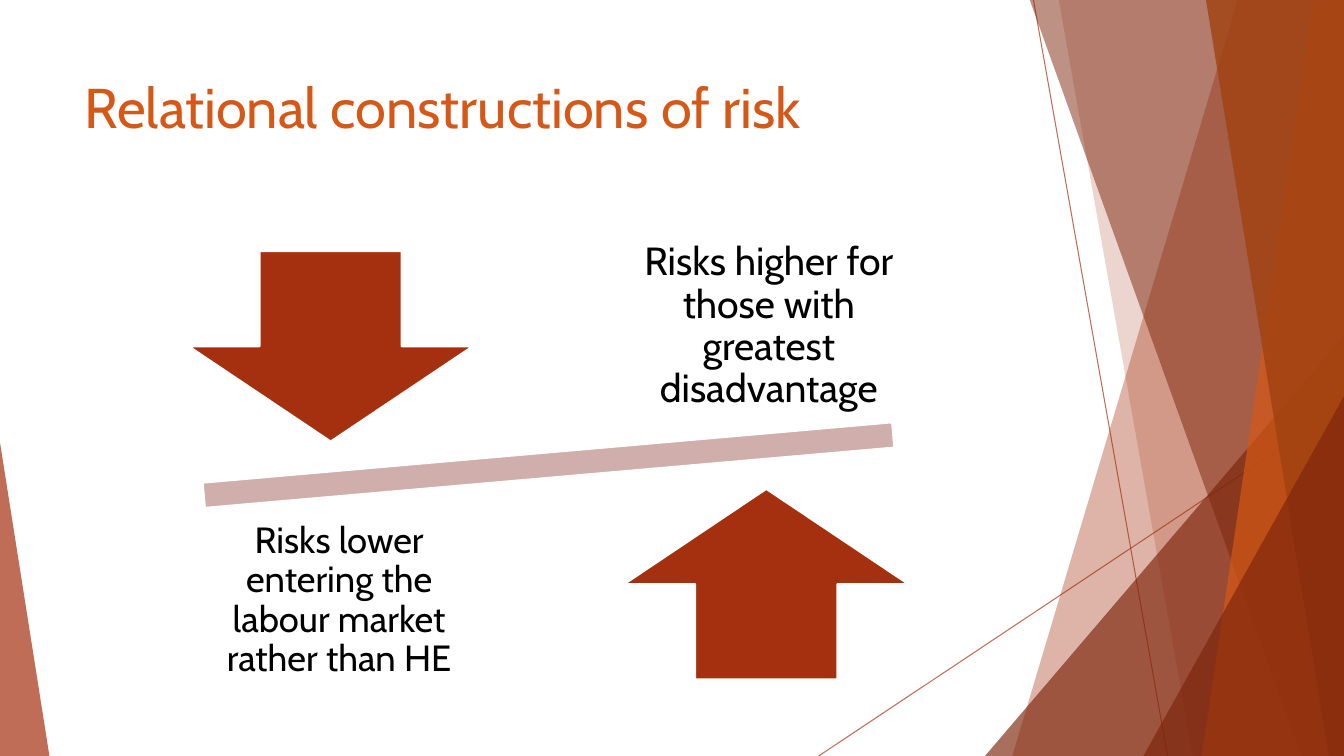
"""Build the slide on relational constructions of risk."""
import pptx
import pptx.dml.color
import pptx.enum.shapes
import pptx.enum.text
import pptx.oxml
import pptx.oxml.ns
import pptx.util

Inches = pptx.util.Inches
Pt = pptx.util.Pt
Kind = pptx.enum.shapes.MSO_SHAPE
Align = pptx.enum.text.PP_ALIGN
Anchor = pptx.enum.text.MSO_ANCHOR

RUST = "A5300F"
DARK = "7C240B"
ORANGE = "D55816"
BROWN = "A04210"
PINK = "CFAEAB"
WHITE = "FFFFFF"
BLACK = "000000"
WIDE, HIGH = 13.33, 7.5


def paint(fill, color, alpha=100):
    fill.solid()
    fill.fore_color.rgb = pptx.dml.color.RGBColor.from_string(color)
    if alpha < 100:
        node = fill._xPr.find(pptx.oxml.ns.qn("a:solidFill"))[0]
        tag = pptx.oxml.parse_xml(
            f'<a:alpha {pptx.oxml.ns.nsdecls("a")} val="{alpha * 1000}"/>')
        node.append(tag)


class Page:
    def __init__(self, slide, font):
        self.shapes = slide.shapes
        self.font = font

    def line(self, start, end, color, width, alpha):
        ends = [Inches(n) for n in (*start, *end)]
        item = self.shapes.add_connector(
            pptx.enum.shapes.MSO_CONNECTOR.STRAIGHT, *ends)
        item.line.width = Pt(width)
        paint(item.line.fill, color, alpha)
        item._element.spPr.append(pptx.oxml.parse_xml(
            f'<a:effectLst {pptx.oxml.ns.nsdecls("a")}/>'))

    def style(self, item, color, alpha, edge):
        item.shadow.inherit = False
        paint(item.fill, color, alpha)
        if edge:
            paint(item.line.fill, edge)
            item.line.width = Pt(1.5)
        else:
            item.line.fill.background()

    def band(self, top, foot, color, alpha):
        spots = [(top, -0.01), (WIDE, -0.01), (WIDE, HIGH), (foot, HIGH)]
        first, *rest = [(Inches(x), Inches(y)) for x, y in spots]
        build = self.shapes.build_freeform(*first)
        build.add_line_segments(rest, close=True)
        self.style(build.convert_to_shape(), color, alpha, None)

    def shape(self, kind, box, color, alpha=100, edge=None, turn=0):
        item = self.shapes.add_shape(kind, *[Inches(n) for n in box])
        item.rotation = turn
        self.style(item, color, alpha, edge)
        return item

    def wedge(self, box, tip, color, alpha):
        item = self.shape(Kind.ISOSCELES_TRIANGLE, box, color, alpha)
        item.adjustments[0] = tip

    def text(self, box, words, size, color, pad=None):
        item = self.shapes.add_textbox(*[Inches(n) for n in box])
        frame = item.text_frame
        frame.word_wrap = True
        para = frame.paragraphs[0]
        if pad is not None:
            frame.vertical_anchor = Anchor.MIDDLE
            frame.margin_left = frame.margin_right = Inches(pad)
            frame.margin_top = frame.margin_bottom = Inches(pad)
            para.alignment = Align.CENTER
            para.line_spacing = 0.9
        run = para.add_run()
        run.text = words
        run.font.name = self.font
        run.font.size = Pt(size)
        paint(run.font.fill, color)


def main():
    deck = pptx.Presentation()
    deck.slide_width = Inches(WIDE)
    deck.slide_height = Inches(HIGH)
    page = Page(deck.slides.add_slide(deck.slide_layouts[6]), "Cabin")

    page.line((10.25, 0), (11.58, HIGH), RUST, 0.75, 70)
    page.line((WIDE, 4.03), (8.12, HIGH), RUST, 0.75, 70)
    page.band(12.28, 10.04, RUST, 36)
    page.band(10.5, 11.83, RUST, 20)
    page.wedge((9.77, 3.33, 3.56, 4.17), 1, DARK, 66)
    page.band(10.21, 12.91, DARK, 50)
    page.band(13.03, 11.92, ORANGE, 70)
    page.band(11.96, 13.18, BROWN, 80)
    page.wedge((11.34, 3.93, 1.99, 3.57), 1, DARK, 66)
    page.wedge((0, 4.39, 0.49, 3.11), 0, RUST, 70)

    page.text((0.74, 0.67, 9.4, 1.44), "Relational constructions of risk",
              40, ORANGE)
    page.shape(Kind.MATH_MINUS, (0.77, 4.08, 9.34, 1.07), PINK,
               edge=WHITE, turn=355)
    page.shape(Kind.DOWN_ARROW, (1.87, 2.49, 2.82, 1.89), RUST, edge=WHITE)
    page.text((6.12, 2.25, 3.01, 1.98),
              "Risks higher for those with greatest disadvantage",
              28, BLACK, 0.22)
    page.shape(Kind.UP_ARROW, (6.19, 4.85, 2.82, 1.89), RUST, edge=WHITE)
    page.text((1.86, 4.97, 3.01, 1.98),
              "Risks lower entering the labour market rather than HE",
              26, BLACK, 0.2)
    deck.save("out.pptx")


if __name__ == "__main__":
    main()
